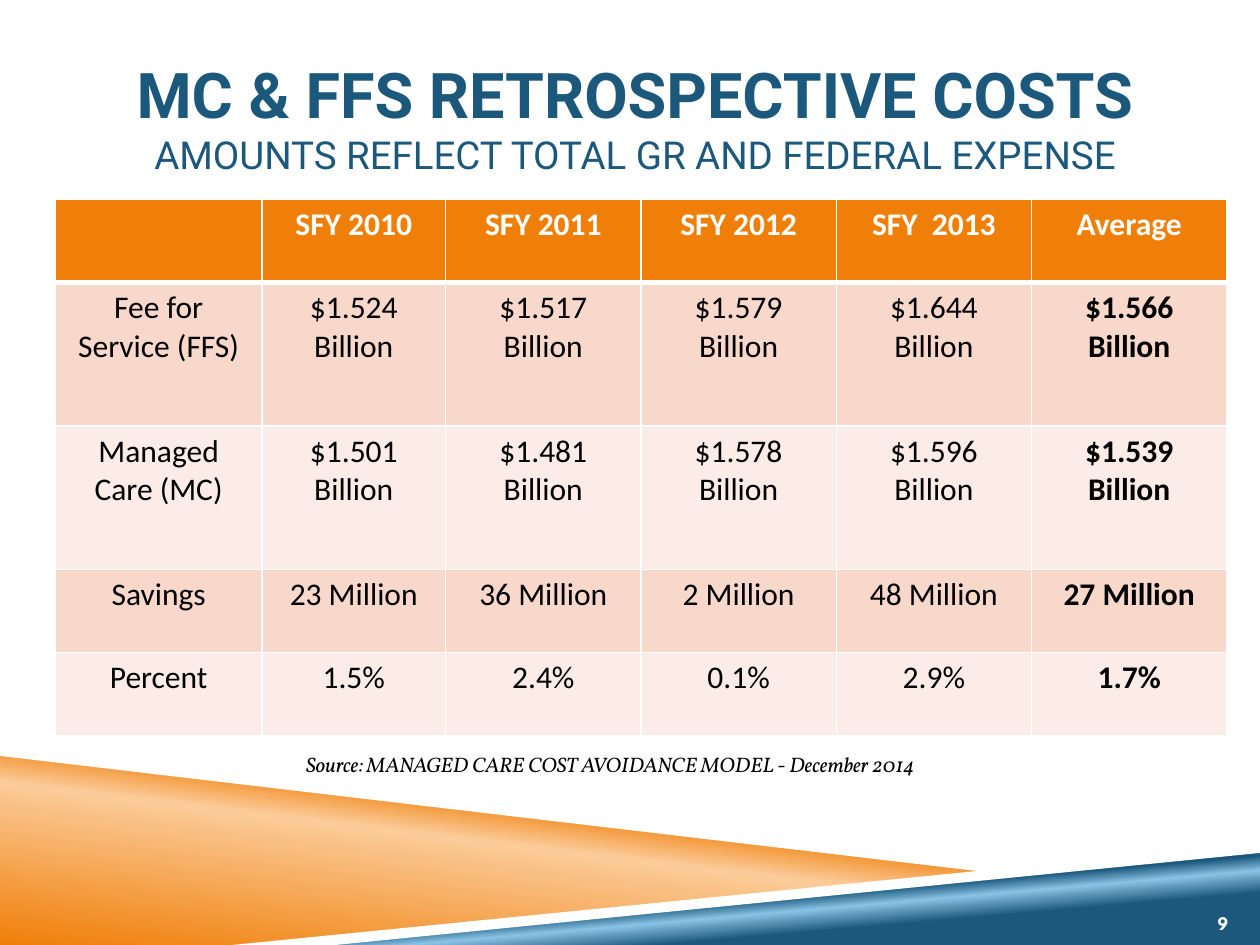
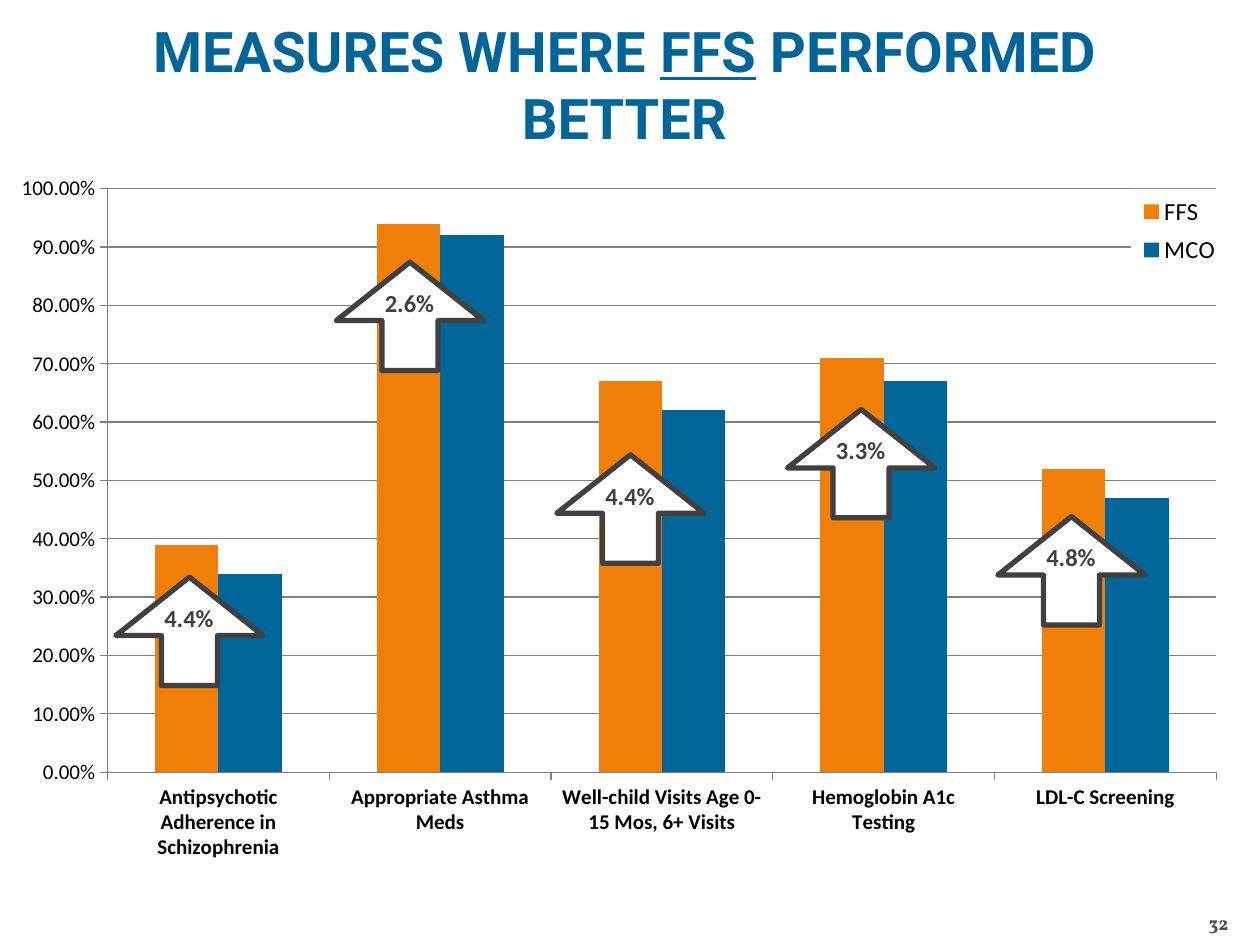
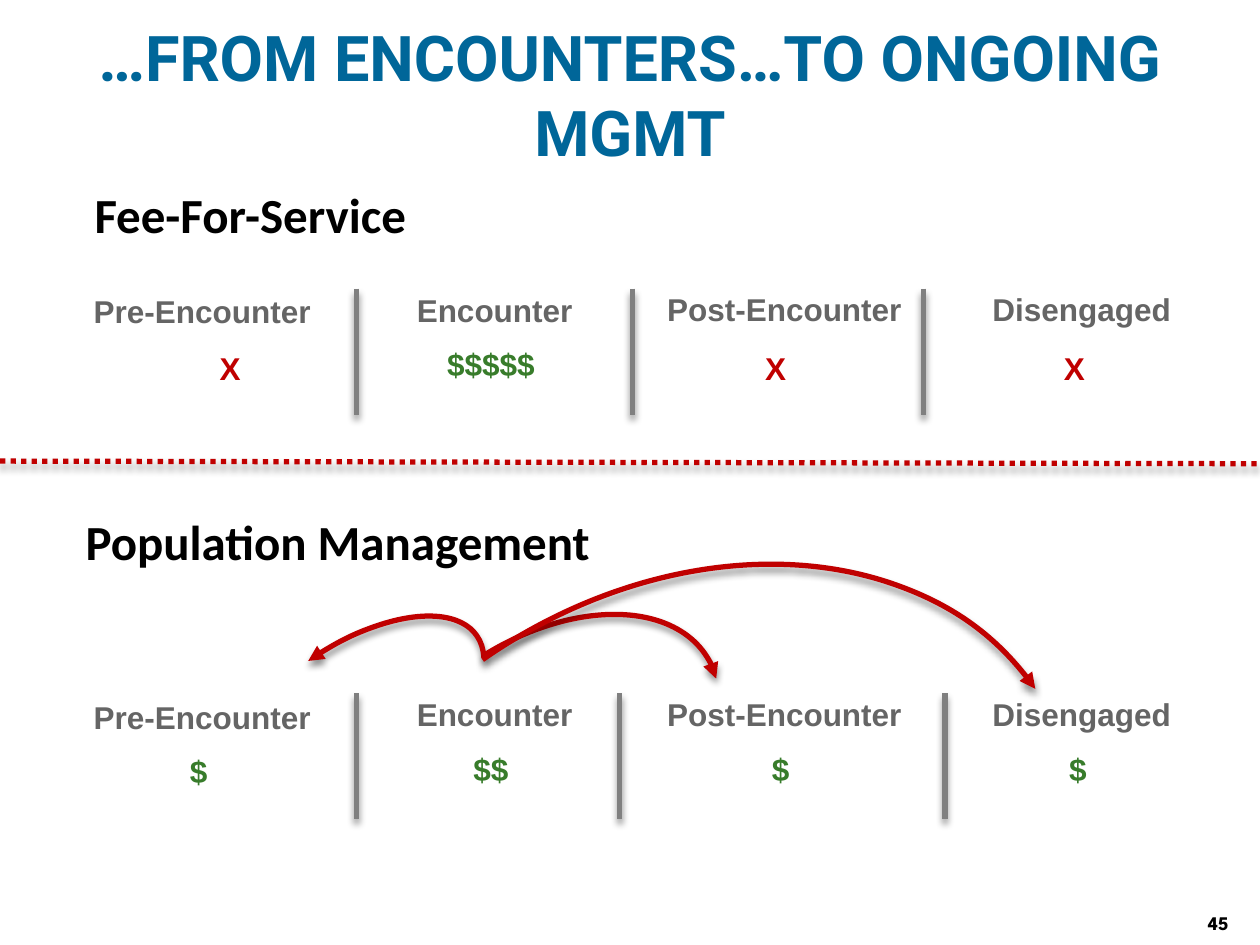
from copy import deepcopy
from pptx import Presentation
from pptx.chart.data import CategoryChartData
from pptx.dml.color import RGBColor
from pptx.enum import chart as kinds, dml, shapes, text
from pptx.oxml import parse_xml
from pptx.oxml.ns import nsdecls, qn
from pptx.util import Pt

ORANGE = RGBColor(0xF0, 0x7F, 0x09)
PEACH = RGBColor(0xFB, 0xCC, 0x9A)
NAVY = RGBColor(0x1B, 0x58, 0x7C)
SKY = RGBColor(0x89, 0xC3, 0xE5)
BLUE = RGBColor(0x00, 0x66, 0x99)
ROSE = RGBColor(0xF9, 0xD8, 0xCC)
BLUSH = RGBColor(0xFC, 0xEC, 0xE7)
RED = RGBColor(0xC0, 0x00, 0x00)
GREEN = RGBColor(0x38, 0x7C, 0x2B)
SLATE = RGBColor(0x40, 0x40, 0x40)
SMOKE = RGBColor(0x4D, 0x4D, 0x4D)
STONE = RGBColor(0x65, 0x65, 0x65)
GRAY = RGBColor(0x80, 0x80, 0x80)
BLACK = RGBColor(0, 0, 0)
WHITE = RGBColor(255, 255, 255)

CENTER = text.PP_ALIGN.CENTER
TITLE = {"size": Pt(36), "name": "Roboto", "bold": True, "rgb": BLUE}
HEAD = {"size": Pt(28), "name": "Calibri", "bold": True, "rgb": BLACK}
LABEL = {"size": Pt(18), "name": "Arial", "bold": True, "rgb": STONE}
CELL = {"size": Pt(18), "name": "Calibri", "bold": False, "rgb": BLACK}
GAIN = {"size": Pt(14), "name": "Calibri", "bold": True, "rgb": SLATE}
NOTE = {"size": Pt(12), "name": "Vollkorn", "italic": True, "rgb": BLACK}
PAGE = {"size": Pt(11), "name": "League Spartan", "bold": True, "rgb": BLACK}
FLAT = {"margin_left": 0, "margin_right": 0}
MID = {**FLAT, "vertical_anchor": text.MSO_ANCHOR.MIDDLE}
FOOT = {**FLAT, "margin_bottom": 0, "vertical_anchor": text.MSO_ANCHOR.BOTTOM}


def put(slide, box, parts, form, align=CENTER, frame=None):
    body = slide.shapes.add_textbox(*map(Pt, box)).text_frame
    for key, val in {"word_wrap": True, **(frame or {})}.items():
        setattr(body, key, val)
    para = body.paragraphs[0]
    para.alignment = align
    for words, extra in parts:
        if words == "\n":
            para.add_line_break()
            continue
        run = para.add_run()
        run.text = words
        for key, val in {**form, **extra}.items():
            setattr(run.font.color if key == "rgb" else run.font, key, val)


def ink(item, color):
    item.line.color.rgb = color
    item.line.width = Pt(3)
    item._element.spPr.append(parse_xml(
        f'<a:effectLst {nsdecls("a")}><a:outerShdw blurRad="{Pt(4)}" dist="{Pt(3)}" '
        'dir="5400000" rotWithShape="0"><a:srgbClr val="000000">'
        '<a:alpha val="43000"/></a:srgbClr></a:outerShdw></a:effectLst>'))


deck = Presentation()
deck.slide_width, deck.slide_height = Pt(720), Pt(540)
costs, scores, care = [deck.slides.add_slide(deck.slide_layouts[6]) for _ in range(3)]

bands = [
    ([(0, 429.8), (570.2, 498.2), (144, 540), (0, 540)],
     277, [(0, ORANGE), (0.52, PEACH), (0.66, ORANGE)]),
    ([(142.6, 540), (720, 483.8), (720, 540)],
     265, [(0.28, NAVY), (0.4, SKY), (0.48, NAVY)]),
    ([(0, 426.2), (0, 432), (568.8, 499), (599, 496.8)], None, None),
    ([(720, 481.7), (132.5, 540), (191.5, 540), (720, 487.4)], None, None),
]
for spots, angle, stops in bands:
    first, *rest = [(Pt(x), Pt(y)) for x, y in spots]
    pen = costs.shapes.build_freeform(*first)
    pen.add_line_segments(rest)
    band = pen.convert_to_shape()
    band.shadow.inherit = False
    band.line.fill.background()
    if stops:
        band.fill.gradient()
        band.fill.gradient_angle = 360 - angle
        ramp = band._element.find(".//" + qn("a:gsLst"))
        ramp.append(deepcopy(ramp[0]))
        for stop, (place, color) in zip(band.fill.gradient_stops, stops):
            stop.position = place
            stop.color.rgb = color
    else:
        band.fill.solid()
        band.fill.fore_color.rgb = WHITE

put(costs, (23.8, 21.6, 678.2, 90),
    [("MC & FFS RETROSPECTIVE COSTS", {}), ("\n", {}),
     ("AMOUNTS REFLECT TOTAL GR AND FEDERAL EXPENSE", {"size": Pt(22), "bold": False})],
    {**TITLE, "rgb": NAVY}, frame=MID)

rows = [
    ["", "SFY 2010", "SFY 2011", "SFY 2012", "SFY  2013", "Average"],
    ["Fee for Service (FFS)", "$1.524 Billion", "$1.517 Billion", "$1.579 Billion",
     "$1.644 Billion", "$1.566 Billion"],
    ["Managed Care (MC)", "$1.501 Billion", "$1.481 Billion", "$1.578 Billion",
     "$1.596 Billion", "$1.539 Billion"],
    ["Savings", "23 Million", "36 Million", "2 Million", "48 Million", "27 Million"],
    ["Percent", "1.5%", "2.4%", "0.1%", "2.9%", "1.7%"],
]
wide = [118, 105] + [111.6] * 4
tall = [47.5, 82.1, 82.1, 47.5, 47.5]
grid = costs.shapes.add_table(
    5, 6, Pt(31.7), Pt(113.8), Pt(sum(wide)), Pt(sum(tall))).table
grid.horz_banding = False
for col, size in zip(grid.columns, wide):
    col.width = Pt(size)
for r, (row, size) in enumerate(zip(rows, tall)):
    grid.rows[r].height = Pt(size)
    for c, words in enumerate(row):
        cell = grid.cell(r, c)
        cell.text = words
        cell.fill.solid()
        cell.fill.fore_color.rgb = ORANGE if r == 0 else ROSE if r % 2 else BLUSH
        para = cell.text_frame.paragraphs[0]
        para.alignment = CENTER
        form = {**CELL, "bold": r == 0 or c == 5, "rgb": BLACK if r else WHITE}
        for key, val in form.items():
            setattr(para.font.color if key == "rgb" else para.font, key, val)
        for i, side in enumerate("LRTB"):
            thick = 3 if (r, side) in ((0, "B"), (1, "T")) else 1
            cell._tc.get_or_add_tcPr().insert(i, parse_xml(
                f'<a:ln{side} {nsdecls("a")} w="{Pt(thick)}"><a:solidFill>'
                f'<a:srgbClr val="{WHITE}"/></a:solidFill></a:ln{side}>'))

put(costs, (167.8, 426.2, 396, 21.6),
    [("Source: MANAGED CARE COST AVOIDANCE MODEL - December 2014", {})], NOTE, None)

put(scores, (41.8, 18, 630, 59.8),
    [("MEASURES WHERE ", {}), ("FFS", {"underline": True}), (" PERFORMED BETTER", {})],
    {**TITLE, "size": Pt(32)}, frame=MID)

data = CategoryChartData(number_format="0.00%")
data.categories = ["Antipsychotic Adherence in Schizophrenia", "Appropriate Asthma Meds",
                   "Well-child Visits Age 0-15 Mos, 6+ Visits", "Hemoglobin A1c Testing",
                   "LDL-C Screening"]
data.add_series("FFS", [0.39, 0.94, 0.67, 0.71, 0.52])
data.add_series("MCO", [0.34, 0.92, 0.62, 0.67, 0.47])
chart = scores.shapes.add_chart(
    kinds.XL_CHART_TYPE.COLUMN_CLUSTERED,
    Pt(5.8), Pt(95.8), Pt(696.2), Pt(401.8), data).chart
chart.has_title = False
chart.has_legend = True
key = chart.legend
key.position = kinds.XL_LEGEND_POSITION.RIGHT
key.include_in_layout = False
plot = chart.plots[0]
plot.gap_width, plot.overlap, plot.vary_by_categories = 150, 0, False
for line, color in zip(plot.series, (ORANGE, BLUE)):
    line.format.fill.solid()
    line.format.fill.fore_color.rgb = color
cats, vals = chart.category_axis, chart.value_axis
limits = {"minimum_scale": 0, "maximum_scale": 1, "major_unit": 0.1,
          "has_major_gridlines": True}
for name, val in limits.items():
    setattr(vals, name, val)
vals.tick_labels.number_format = "0.00%"
vals.tick_labels.number_format_is_linked = False
for rule in (cats, vals, vals.major_gridlines):
    rule.format.line.color.rgb = GRAY
    rule.format.line.width = Pt(0.75)
for axis in (cats, vals):
    axis.major_tick_mark = kinds.XL_TICK_MARK.OUTSIDE
fonts = [(chart.font, 10, "Vollkorn", False), (cats.tick_labels.font, 12, "Calibri", True),
         (vals.tick_labels.font, 12, "Calibri", False), (key.font, 14, "Calibri", False)]
for font, size, face, bold in fonts:
    font.size, font.name, font.bold = Pt(size), face, bold
    font.color.rgb = BLACK

area = chart._chartSpace.find(".//" + qn("c:plotArea"))
inner = '<c:layoutTarget val="inner"/>'
for host, spot, lead, nums in [(area, 0, inner, (0.08, 0.03, 0.91, 0.83)),
                               (key._element, 1, "", (0.92, 0.03, 0.08, 0.12))]:
    for old in host.findall(qn("c:layout")):
        host.remove(old)
    modes = "".join(f'<c:{n}Mode val="edge"/>' for n in "xy")
    sizes = "".join(f'<c:{n} val="{num}"/>' for n, num in zip("xywh", nums))
    host.insert(spot, parse_xml(f'<c:layout {nsdecls("c")}><c:manualLayout>{lead}{modes}'
                                f'{sizes}</c:manualLayout></c:layout>'))
key._element.find(qn("c:overlay")).addnext(parse_xml(
    f'<c:spPr {nsdecls("c", "a")}><a:solidFill><a:srgbClr val="{WHITE}"/>'
    '</a:solidFill></c:spPr>'))

gains = [(66.2, 329.8, "4.4%"), (192.2, 149.8, "2.6%"), (318.2, 259.9, "4.4%"),
         (450, 234, "3.3%"), (570.2, 295.2, "4.8%")]
for x, y, gain in gains:
    arrow = scores.shapes.add_shape(
        shapes.MSO_SHAPE.UP_ARROW, Pt(x), Pt(y), Pt(84.2), Pt(61.9))
    arrow.adjustments[0], arrow.adjustments[1] = 0.38, 0.54
    arrow.shadow.inherit = False
    arrow.fill.solid()
    arrow.fill.fore_color.rgb = WHITE
    arrow.line.color.rgb = SLATE
    arrow.line.width = Pt(3)
    put(scores, (x + 5.8, y + 11.2, 72, 24.5), [(gain, {})], GAIN)

put(care, (0, 5.8, 720, 95.8), [("…FROM ENCOUNTERS…TO ONGOING MGMT", {})],
    TITLE, frame=MID)
put(care, (54, 102.2, 615.6, 48.2), [("Fee-For-Service", {})], HEAD, None, FLAT)
put(care, (41.8, 288.7, 613.4, 48.2), [("Population Management", {})], HEAD, None)

stages = ["Pre-Encounter", "Encounter", "Post-Encounter", "Disengaged"]
lefts = [36.7, 203.8, 369.4, 539.3]
models = [
    ([163.4, 162.7, 162, 162],
     [(52.6, 195.8, "X"), (201.6, 193.7, "$$$$$"), (364.3, 195.8, "X"), (535, 195.8, "X")]),
    ([395.3, 393.8, 393.8, 393.8],
     [(34.6, 426.2, "$"), (201.6, 424.8, "$$"), (367.2, 424.8, "$"), (537.1, 424.8, "$")]),
]
for tops, marks in models:
    for stage, left, top, (x, y, mark) in zip(stages, lefts, tops, marks):
        put(care, (left, top, 157.7, 28.8), [(stage, {})], LABEL)
        put(care, (x, y, 157.7, 28.8), [(mark, {})],
            {**LABEL, "rgb": RED if mark == "X" else GREEN})

rules = [(x, y, x, y + 72, GRAY) for y, xs in ((164.9, (203.8, 361.4, 527.8)),
                                               (396, (203.8, 354.2, 540))) for x in xs]
rules.append((0, 263.5, 720, 265, RED))
for *ends, color in rules:
    rule = care.shapes.add_connector(shapes.MSO_CONNECTOR.STRAIGHT, *map(Pt, ends))
    ink(rule, color)
    if color == RED:
        rule.line.dash_style = dml.MSO_LINE.ROUND_DOT

arcs = [((113, 370.1, 175, 85.7), 325.4, 4.94, "head"),
        ((204.5, 364.3, 216, 136.8), 327.8, 4.39, "tail"),
        ((137.5, 342, 499, 388.8), 325.1, 0, "tail")]
for box, turn, sweep, end in arcs:
    arc = care.shapes.add_shape(shapes.MSO_SHAPE.ARC, *map(Pt, box))
    arc.rotation = turn
    arc.adjustments[0], arc.adjustments[1] = 162, sweep
    arc.fill.background()
    ink(arc, RED)
    arc._element.spPr.find(qn("a:ln")).append(
        parse_xml(f'<a:{end}End {nsdecls("a")} type="triangle"/>'))

pages = [(costs, "9", {"rgb": WHITE}), (scores, "32", {"name": "Vollkorn", "rgb": SMOKE}),
         (care, "45", {})]
for slide, num, extra in pages:
    put(slide, (666, 505.4, 36, 28.8), [(num, extra)], PAGE, text.PP_ALIGN.RIGHT, FOOT)

deck.save("out.pptx")
